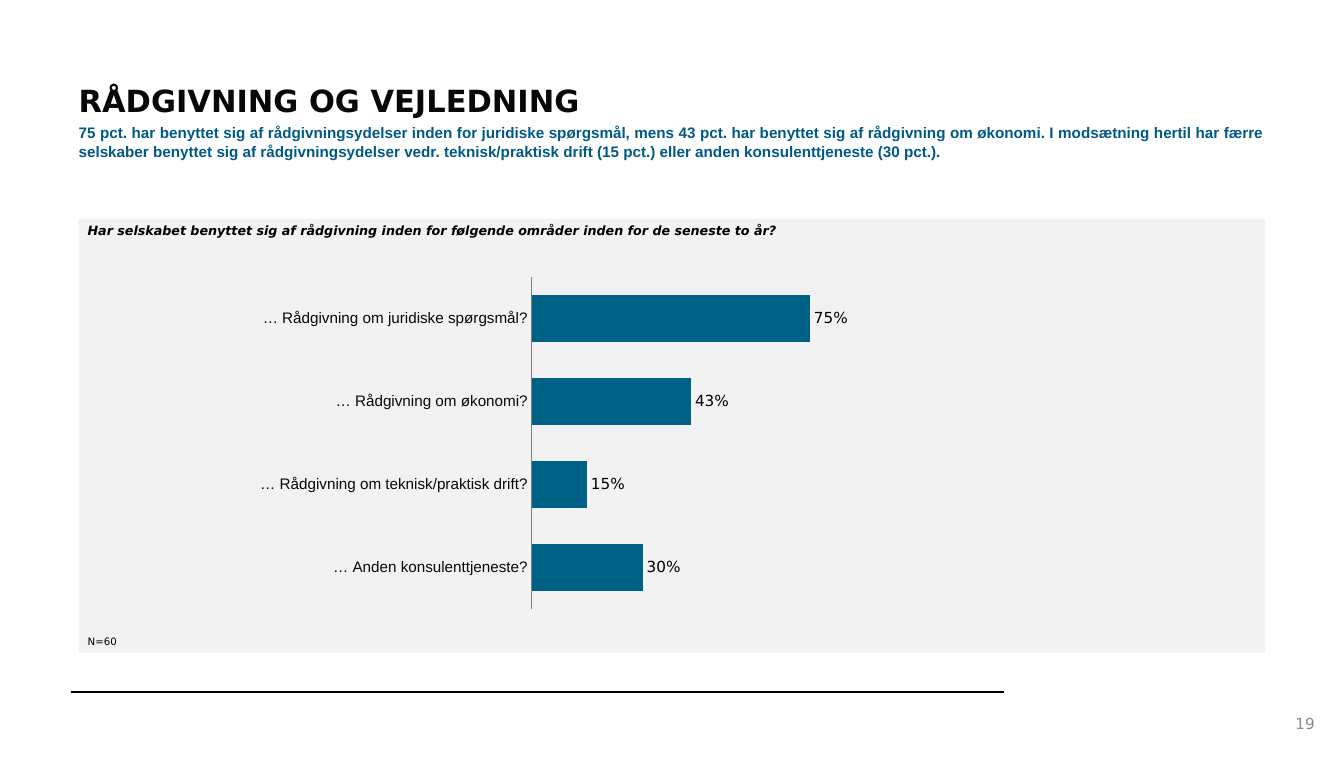
from dataclasses import dataclass

from lxml import etree
from pptx import Presentation
from pptx import util as u
from pptx.chart import data as cd
from pptx.dml import color
from pptx.enum import chart as ec
from pptx.enum import shapes, text
from pptx.oxml import ns


@dataclass(frozen=True)
class Theme:
    """Colours, fonts and type sizes of the slide."""
    ink: str = "080808"
    black: str = "000000"
    accent: str = "005A84"
    bar: str = "006186"
    panel: str = "F2F2F2"
    axis: str = "808080"
    muted: str = "8C8C8C"
    head_font: str = "DejaVu Sans"
    body_font: str = "Arial"
    title: int = 24
    body: int = 12
    question: int = 10
    note: int = 8


T = Theme()
ANSWERS = {
    "… Anden konsulenttjeneste?": 0.30,
    "… Rådgivning om teknisk/praktisk drift?": 0.15,
    "… Rådgivning om økonomi?": 0.43,
    "… Rådgivning om juridiske spørgsmål?": 0.75,
}


def rgb(value):
    """Turn a hex string into a colour."""
    return color.RGBColor.from_string(value)


def style(font, size, ink, name=T.head_font, bold=False, italic=False):
    """Format a font."""
    font.size, font.name, font.bold, font.italic = u.Pt(size), name, bold, italic
    font.color.rgb = rgb(ink)


def write(sp, words, size, ink, align=text.PP_ALIGN.LEFT, spacing=None,
          margins=(0.1, 0.05), anchor=text.MSO_ANCHOR.TOP, **look):
    """Write one formatted run into a shape."""
    tf = sp.text_frame
    tf.word_wrap = True
    tf.auto_size = text.MSO_AUTO_SIZE.NONE
    tf.vertical_anchor = anchor
    tf.margin_left = tf.margin_right = u.Inches(margins[0])
    tf.margin_top = tf.margin_bottom = u.Inches(margins[1])
    p = tf.paragraphs[0]
    p.alignment = align
    if spacing:
        p.line_spacing = u.Pt(spacing)
    r = p.add_run()
    r.text = words
    style(r.font, size, ink, **look)


def add_text(s, box, words, size, ink, **options):
    """Add a text box."""
    write(s.shapes.add_textbox(*map(u.Inches, box)), words, size, ink, **options)


def add_header(s, x, y, w):
    """Place the title and the summary below it."""
    title = s.shapes.title
    title.left, title.top, title.width, title.height = map(u.Inches, (x, y, 12.38, 0.52))
    write(title, "RÅDGIVNING OG VEJLEDNING", T.title, T.ink, spacing=40,
          margins=(0, 0), anchor=text.MSO_ANCHOR.MIDDLE, bold=True)
    add_text(s, (x, y + 0.59, w, 1.04),
             "75 pct. har benyttet sig af rådgivningsydelser inden for juridiske spørgsmål, "
             "mens 43 pct. har benyttet sig af rådgivning om økonomi. I modsætning hertil har "
             "færre selskaber benyttet sig af rådgivningsydelser vedr. teknisk/praktisk drift "
             "(15 pct.) eller anden konsulenttjeneste (30 pct.).",
             T.body, T.accent, align=text.PP_ALIGN.JUSTIFY, spacing=14.5,
             margins=(0, 0), name=T.body_font, bold=True)


def fix_plot(chart, **fractions):
    """Pin the inner plot area to fractions of the chart."""
    area = chart.plots[0]._element.getparent()
    for old in area.findall(ns.qn("c:layout")):
        area.remove(old)
    layout = etree.Element(ns.qn("c:layout"))
    manual = etree.SubElement(layout, ns.qn("c:manualLayout"))
    settings = {"layoutTarget": "inner", "xMode": "edge", "yMode": "edge", **fractions}
    for tag, value in settings.items():
        etree.SubElement(manual, ns.qn(f"c:{tag}")).set("val", str(value))
    area.insert(0, layout)


def add_bars(s, x, y, w, h):
    """Draw the bar chart of the answers."""
    data = cd.CategoryChartData(number_format="0%")
    data.categories = list(ANSWERS)
    data.add_series("Series 1", list(ANSWERS.values()))
    chart = s.shapes.add_chart(ec.XL_CHART_TYPE.BAR_CLUSTERED,
                               *map(u.Inches, (x, y, w, h)), data).chart
    chart.has_legend = chart.has_title = False
    style(chart.font, T.body, T.black)

    axis = chart.category_axis
    axis.major_tick_mark = axis.minor_tick_mark = ec.XL_TICK_MARK.NONE
    axis.format.line.color.rgb = rgb(T.axis)
    axis.format.line.width = u.Pt(0.25)
    style(axis.tick_labels.font, T.body, T.ink, T.body_font)

    values = chart.value_axis
    values.minimum_scale, values.maximum_scale, values.major_unit = 0, 1, 0.25
    values.has_major_gridlines = values.visible = False

    plot = chart.plots[0]
    plot.gap_width, plot.vary_by_categories = 75, False
    fill = plot.series[0].format.fill
    fill.solid()
    fill.fore_color.rgb = rgb(T.bar)
    plot.has_data_labels = True
    labels = plot.data_labels
    labels.show_value = True
    labels.number_format, labels.number_format_is_linked = "0%", False
    labels.position = ec.XL_LABEL_POSITION.OUTSIDE_END
    style(labels.font, T.body, T.black)
    fix_plot(chart, x=0.425, y=0.02, w=0.555, h=0.96)


def add_panel(s, x, y, w, h):
    """Place the grey panel with its question, chart and base size."""
    sp = s.shapes.add_shape(shapes.MSO_SHAPE.RECTANGLE, *map(u.Inches, (x, y, w, h)))
    sp.shadow.inherit = False
    sp.fill.solid()
    sp.fill.fore_color.rgb = rgb(T.panel)
    sp.line.fill.background()
    add_text(s, (x, y, w, 0.27),
             "Har selskabet benyttet sig af rådgivning inden for følgende områder "
             "inden for de seneste to år?",
             T.question, T.black, bold=True, italic=True)
    add_text(s, (x, y + h - 0.24, 0.75, 0.24), "N=60", T.note, T.black)
    add_bars(s, x + 1.84, y + 0.56, 7.32, 3.78)


def add_footer(s, x, y, w):
    """Place the bottom rule and the page number."""
    rule = s.shapes.add_connector(shapes.MSO_CONNECTOR.STRAIGHT,
                                  *map(u.Inches, (x, y, x + w, y)))
    rule.line.color.rgb = rgb(T.black)
    rule.line.width = u.Pt(1)
    etree.SubElement(rule._element.spPr, ns.qn("a:effectLst"))
    add_text(s, (x + w + 0.07, y + 0.12, 3.43, 0.44), "19", T.body, T.muted,
             align=text.PP_ALIGN.RIGHT, anchor=text.MSO_ANCHOR.MIDDLE)


def main():
    """Build and save the slide."""
    prs = Presentation()
    prs.slide_width, prs.slide_height = u.Inches(14.69), u.Inches(8.27)
    s = prs.slides.add_slide(prs.slide_layouts[5])
    add_footer(s, 0.78, 7.56, 10.19)
    add_header(s, 0.86, 0.76, 12.97)
    add_panel(s, 0.86, 2.39, 12.97, 4.74)
    prs.save("out.pptx")


if __name__ == "__main__":
    main()
